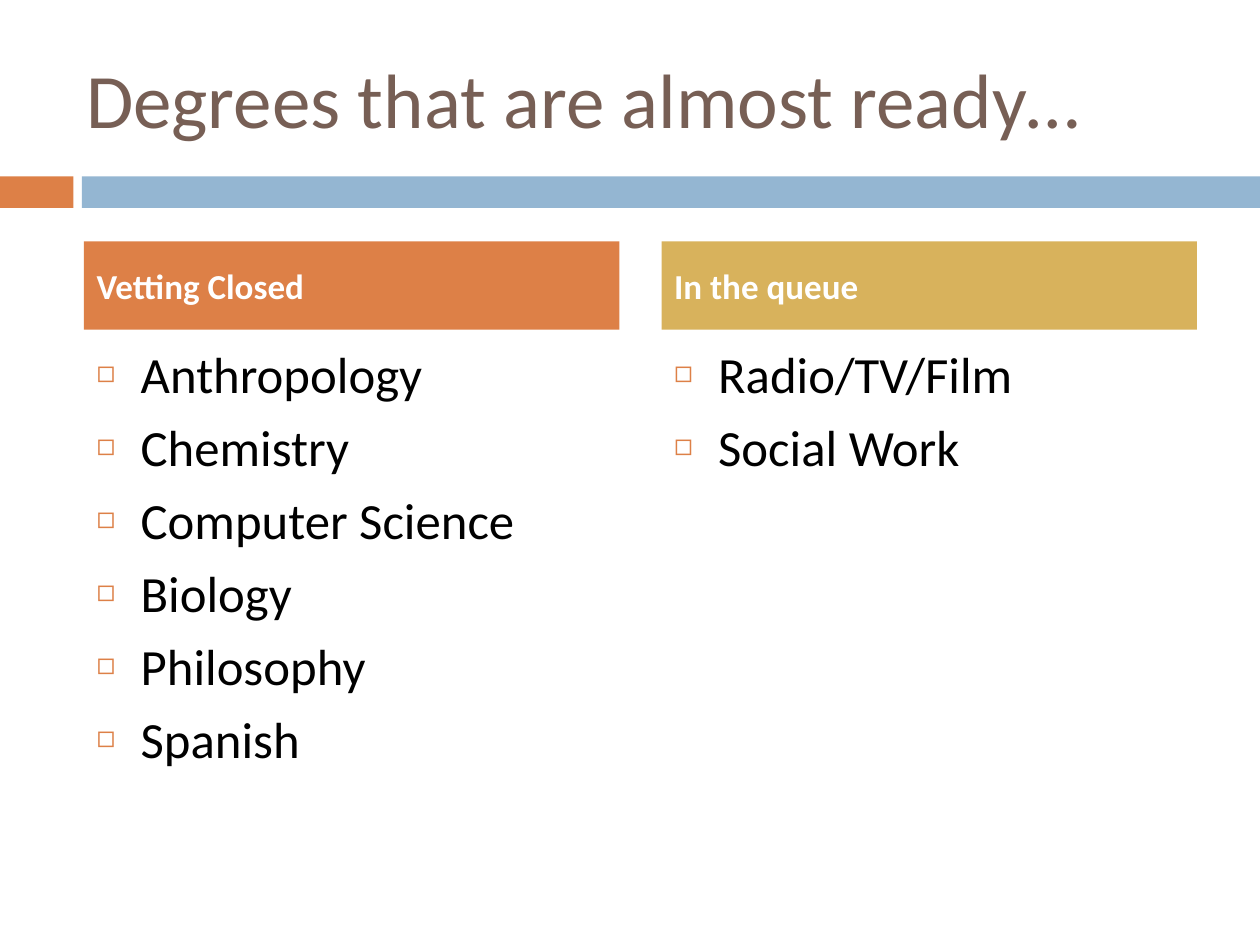
from dataclasses import dataclass

from lxml.etree import SubElement
from pptx import Presentation
from pptx.dml.color import RGBColor
from pptx.enum.shapes import MSO_SHAPE as Preset
from pptx.enum.text import MSO_ANCHOR as Anchor
from pptx.enum.text import MSO_AUTO_SIZE as AutoSize
from pptx.enum.text import PP_ALIGN as Align
from pptx.oxml.ns import qn
from pptx.util import Emu, Inches, Pt

GRID_UNIT = Inches(10) / 120
COLUMNS, ROWS = 120, 90
COMPARISON_LAYOUT = 4


@dataclass(frozen=True)
class Theme:
    font: str = "Calibri"
    title_size: int = 44
    list_size: int = 29
    heading_size: int = 20
    space_before: int = 7
    bullet_percent: int = 60
    title: str = "775F55"
    text: str = "000000"
    heading: str = "FFFFFF"
    orange: str = "DD8047"
    blue: str = "94B6D2"
    gold: str = "D8B25C"


@dataclass(frozen=True)
class Box:
    column: float
    row: float
    columns: float
    rows: float

    def place(self, shape) -> None:
        shape.left, shape.top, shape.width, shape.height = (
            Emu(round(length * GRID_UNIT))
            for length in (self.column, self.row, self.columns, self.rows)
        )


@dataclass(frozen=True)
class Bar:
    column: float
    columns: float
    color: str


@dataclass(frozen=True)
class DegreeList:
    heading: str
    color: str
    degrees: tuple[str, ...]
    column: int
    heading_index: int
    list_index: int


THEME = Theme()
TITLE_BOX = Box(7, 3.6, 107, 11.4)
BARS = (Bar(0, 7, THEME.orange), Bar(7.8, COLUMNS - 7.8, THEME.blue))
DEGREE_LISTS = (
    DegreeList(
        "Vetting Closed",
        THEME.orange,
        ("Anthropology", "Chemistry", "Computer Science",
         "Biology", "Philosophy", "Spanish"),
        8, 1, 2,
    ),
    DegreeList(
        "In the queue", THEME.gold, ("Radio/TV/Film", "Social Work"), 63, 3, 4
    ),
)


def fill_shape(shape, color: str) -> None:
    shape.fill.solid()
    shape.fill.fore_color.rgb = RGBColor.from_string(color)


def draw_bar(slide, bar: Bar) -> None:
    shape = slide.shapes.add_shape(Preset.RECTANGLE, 0, 0, 0, 0)
    Box(bar.column, 16.8, bar.columns, 3).place(shape)
    shape.shadow.inherit = False
    fill_shape(shape, bar.color)
    shape.line.fill.background()


def write_text(shape, box: Box, lines: tuple[str, ...], anchor: Anchor) -> list:
    box.place(shape)
    frame = shape.text_frame
    frame.text = "\n".join(lines)
    frame.word_wrap = True
    frame.auto_size = AutoSize.NONE
    frame.vertical_anchor = anchor
    return list(frame.paragraphs)


def format_paragraph(paragraph, size: int, color: str, bold: bool = False) -> None:
    paragraph.alignment = Align.LEFT
    font = paragraph.font
    font.name = THEME.font
    font.size = Pt(size)
    font.bold = bold
    font.color.rgb = RGBColor.from_string(color)


def add_bullet(paragraph) -> None:
    properties = paragraph._p.get_or_add_pPr()
    indent = Inches(0.35)
    properties.set("marL", str(indent))
    properties.set("indent", str(-indent))
    color = SubElement(properties, qn("a:buClr"))
    SubElement(color, qn("a:srgbClr"), val=THEME.orange)
    SubElement(properties, qn("a:buSzPct"), val=str(THEME.bullet_percent * 1000))
    SubElement(properties, qn("a:buFont"), typeface=THEME.font)
    SubElement(properties, qn("a:buChar"), char="◻")


def draw_title(slide, text: str) -> None:
    for paragraph in write_text(slide.shapes.title, TITLE_BOX, (text,), Anchor.MIDDLE):
        format_paragraph(paragraph, THEME.title_size, THEME.title)


def draw_degree_list(slide, group: DegreeList) -> None:
    placeholders = slide.placeholders
    heading = placeholders[group.heading_index]
    fill_shape(heading, group.color)
    heading_box = Box(group.column, 23, 51, 8.4)
    for paragraph in write_text(heading, heading_box, (group.heading,), Anchor.MIDDLE):
        paragraph.space_before = Pt(THEME.space_before)
        format_paragraph(paragraph, THEME.heading_size, THEME.heading, bold=True)

    body = placeholders[group.list_index]
    list_box = Box(group.column, 32, 51, 47)
    for paragraph in write_text(body, list_box, group.degrees, Anchor.TOP):
        paragraph.space_before = Pt(THEME.space_before)
        add_bullet(paragraph)
        format_paragraph(paragraph, THEME.list_size, THEME.text)


def main() -> None:
    presentation = Presentation()
    presentation.slide_width = Emu(round(COLUMNS * GRID_UNIT))
    presentation.slide_height = Emu(round(ROWS * GRID_UNIT))
    slide = presentation.slides.add_slide(
        presentation.slide_layouts[COMPARISON_LAYOUT]
    )
    for bar in BARS:
        draw_bar(slide, bar)
    draw_title(slide, "Degrees that are almost ready…")
    for group in DEGREE_LISTS:
        draw_degree_list(slide, group)
    presentation.save("out.pptx")


if __name__ == "__main__":
    main()
